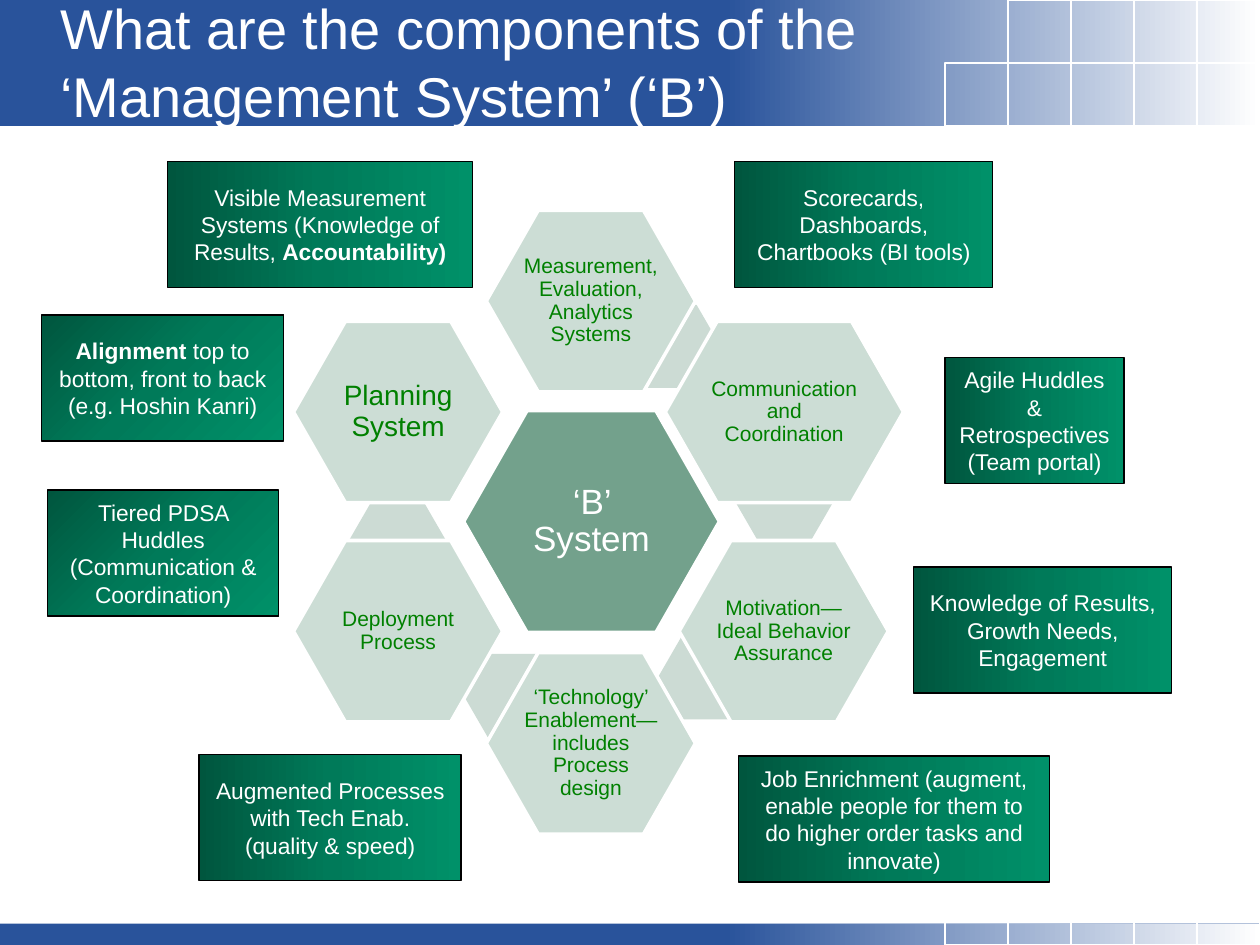
import copy
from dataclasses import dataclass

import pptx
import pptx.dml.color
import pptx.enum.shapes
import pptx.enum.text
import pptx.util
from pptx.util import Inches

SHAPE = pptx.enum.shapes.MSO_SHAPE
ALIGN = pptx.enum.text.PP_ALIGN
ANCHOR = pptx.enum.text.MSO_ANCHOR


@dataclass(frozen=True)
class Theme:
    font: str = "Arial"
    white: str = "FFFFFF"
    black: str = "000000"
    blue: str = "29539B"
    hub: str = "73A18C"
    petal: str = "CCDDD5"
    link: str = "CCDBD4"
    label: str = "008000"
    greens: tuple[str, ...] = ("00563E", "007A59", "009169")
    title_size: int = 32
    hub_size: int = 20
    large_size: int = 16
    petal_size: int = 12
    box_size: int = 13
    thin: float = 0.75
    thick: float = 2


@dataclass(frozen=True)
class Rect:
    x: float
    y: float
    w: float
    h: float

    def inset(self, share: float) -> "Rect":
        """Shrink each side by a share of the width or height."""
        dx, dy = self.w * share, self.h * share
        return Rect(self.x + dx, self.y + dy, self.w - 2 * dx, self.h - 2 * dy)

    def lengths(self) -> list[int]:
        return [Inches(v) for v in (self.x, self.y, self.w, self.h)]


@dataclass(frozen=True)
class Petal:
    text: str
    x: float
    y: float
    w: float = 1.66
    size: int = Theme.petal_size
    link: tuple[float, float] | None = None


@dataclass(frozen=True)
class Box:
    text: str  # asterisks enclose bold words
    x: float
    y: float
    w: float
    angle: int = 0


T = Theme()

PETALS = [
    Petal("Measurement, Evaluation, Analytics Systems", 3.86, 1.67, link=(4.95, 2.42)),
    Petal("Communication and Coordination", 5.28, 2.55, w=1.89, link=(5.84, 3.66)),
    Petal("Motivation—Ideal Behavior Assurance", 5.39, 4.29, link=(5.22, 5.05)),
    Petal("‘Technology’ Enablement—includes Process design", 3.86, 5.18, link=(3.68, 5.19)),
    Petal("Deployment Process", 2.33, 4.29, link=(2.77, 3.96)),
    Petal("Planning System", 2.33, 2.55, size=T.large_size),
]

BOXES = [
    Box("Tiered PDSA Huddles (Communication & Coordination)", 0.38, 3.89, 1.83, angle=45),
    Box("Visible Measurement Systems (Knowledge of Results, *Accountability)*", 1.33, 1.28, 2.42),
    Box("Scorecards, Dashboards, Chartbooks (BI tools)", 5.83, 1.28, 2.05),
    Box("Agile Huddles & Retrospectives (Team portal)", 7.5, 2.84, 1.42),
    Box("Knowledge of Results, Growth Needs, Engagement", 7.25, 4.5, 2.05),
    Box("Job Enrichment (augment, enable people for them to do higher order tasks and innovate)",
        5.86, 6, 2.47),
    Box("*Alignment* top to bottom, front to back (e.g. Hoshin Kanri)", 0.33, 2.5, 1.92, angle=45),
    Box("Augmented Processes with Tech Enab. (quality & speed)", 1.58, 5.99, 2.08),
]


def rgb(color: str) -> pptx.dml.color.RGBColor:
    return pptx.dml.color.RGBColor.from_string(color)


def set_gradient(fill, colors: tuple[str, ...], angle: int) -> None:
    """Spread the colours evenly, with the angle measured clockwise."""
    fill.gradient()
    fill.gradient_angle = -angle % 360
    # The default gradient has two stops; repeat the last one as needed
    last = fill.gradient_stops[1]._gs
    for _ in colors[2:]:
        last.addnext(copy.deepcopy(last))
    for i, (stop, color) in enumerate(zip(fill.gradient_stops, colors)):
        stop.color.rgb = rgb(color)
        stop.position = i / (len(colors) - 1)


def add_shape(s, kind, rect: Rect, *, fill: str | tuple[str, ...] | None = None,
              angle: int = 0, line: str | None = None, width: float = T.thin):
    sp = s.shapes.add_shape(kind, *rect.lengths())
    sp.shadow.inherit = False
    if fill is None:
        sp.fill.background()
    elif isinstance(fill, str):
        sp.fill.solid()
        sp.fill.fore_color.rgb = rgb(fill)
    else:
        set_gradient(sp.fill, fill, angle)
    if line:
        sp.line.color.rgb = rgb(line)
        sp.line.width = pptx.util.Pt(width)
    else:
        sp.line.fill.background()
    return sp


def write_text(sp, text: str, *, size: int, color: str = T.white, align=ALIGN.CENTER,
               spacing: float | None = None, margin: float | None = None) -> None:
    tf = sp.text_frame
    tf.word_wrap = True
    tf.vertical_anchor = ANCHOR.MIDDLE
    if margin is not None:
        tf.margin_left = tf.margin_right = tf.margin_top = tf.margin_bottom = Inches(margin)
    p = tf.paragraphs[0]
    p.alignment = align
    if spacing:
        p.line_spacing = spacing
    for i, part in enumerate(text.split("*")):
        if part:
            r = p.add_run()
            r.text = part
            r.font.name = T.font
            r.font.size = pptx.util.Pt(size)
            r.font.bold = i % 2 == 1
            r.font.color.rgb = rgb(color)


def add_hexagon(s, rect: Rect, text: str, *, fill: str, size: int, color: str,
                margin: float) -> None:
    sp = add_shape(s, SHAPE.HEXAGON, rect, fill=fill, line=T.white, width=T.thick)
    sp.adjustments[0] = 0.286
    label = s.shapes.add_textbox(*rect.inset(1 / 6).lengths())
    write_text(label, text, size=size, color=color, spacing=0.9, margin=margin)


def add_bands(s) -> None:
    for y, h in ((7.33, 0.17), (0, 1)):
        add_shape(s, SHAPE.RECTANGLE, Rect(0, y, 10, h), fill=T.blue)
        add_shape(s, SHAPE.RECTANGLE, Rect(5.75, y, 4.25, h), fill=(T.blue, T.white))
    # Rows of half-inch squares that run to the right edge
    side = 0.5
    for y, count in ((0, 4), (0.5, 5), (7, 5)):
        for i in range(count):
            add_shape(s, SHAPE.RECTANGLE, Rect(10 - (count - i) * side, y, side, side),
                      line=T.white)


def main() -> None:
    prs = pptx.Presentation()
    prs.slide_width, prs.slide_height = Inches(10), Inches(7.5)
    s = prs.slides.add_slide(prs.slide_layouts[6])

    # Header and footer bands, with the title
    add_bands(s)
    title = s.shapes.add_textbox(*Rect(0.38, 0.11, 7.08, 0.75).lengths())
    write_text(title, "What are the components of the ‘Management System’ (‘B’)",
               size=T.title_size, align=ALIGN.LEFT)

    # Hub and its ring of petals, each link lying under its petal
    add_hexagon(s, Rect(3.68, 3.26, 2.03, 1.76), "‘B’ System", fill=T.hub,
                size=T.hub_size, color=T.white, margin=0.03)
    for petal in PETALS:
        if petal.link:
            link = add_shape(s, SHAPE.HEXAGON, Rect(*petal.link, 0.77, 0.66), fill=T.link)
            link.adjustments[0] = 0.289
        add_hexagon(s, Rect(petal.x, petal.y, petal.w, 1.44), petal.text, fill=T.petal,
                    size=petal.size, color=T.label, margin=0.02)

    # Example boxes around the ring
    for box in BOXES:
        sp = add_shape(s, SHAPE.RECTANGLE, Rect(box.x, box.y, box.w, 1), fill=T.greens,
                       angle=box.angle, line=T.black)
        write_text(sp, box.text, size=T.box_size)

    prs.save("out.pptx")


if __name__ == "__main__":
    main()
